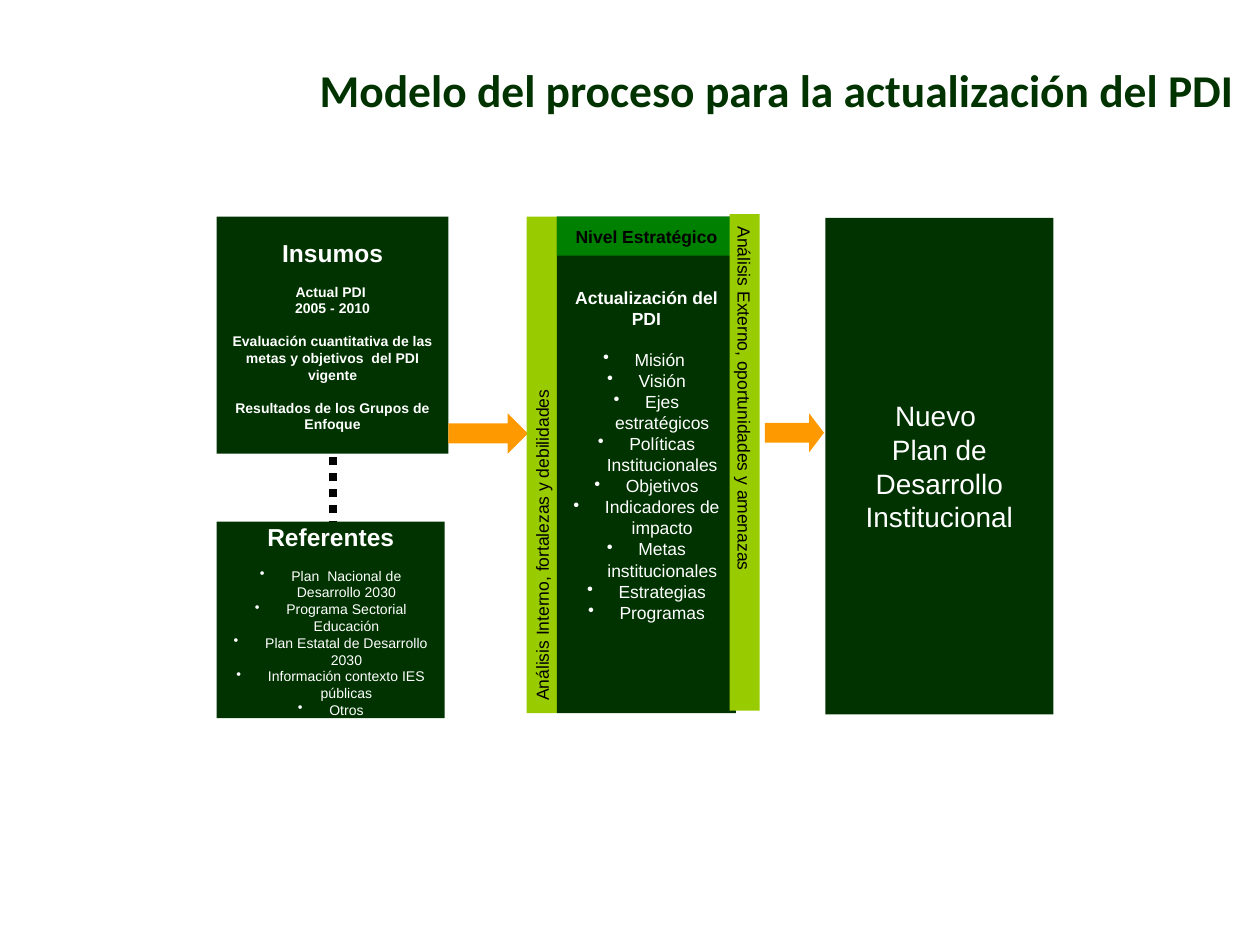
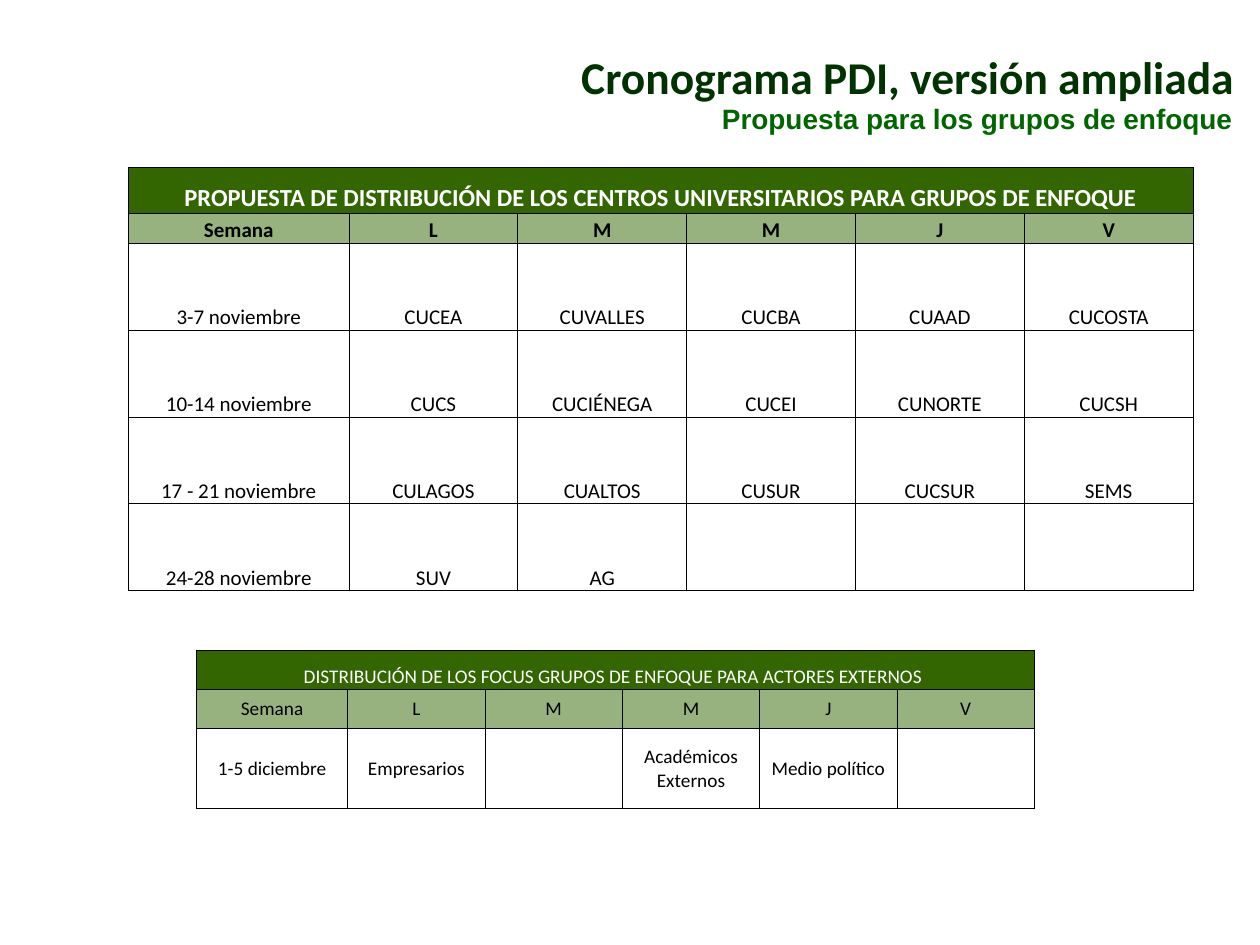
from dataclasses import dataclass

from lxml import etree
from pptx import Presentation
from pptx.dml.color import RGBColor
from pptx.enum.dml import MSO_LINE
from pptx.enum.shapes import MSO_CONNECTOR, MSO_SHAPE
from pptx.enum.text import MSO_ANCHOR, MSO_AUTO_SIZE, PP_ALIGN
from pptx.oxml.ns import qn
from pptx.util import Inches, Pt

RECT, ARROW = MSO_SHAPE.RECTANGLE, MSO_SHAPE.RIGHT_ARROW
STRAIGHT, DOTS = MSO_CONNECTOR.STRAIGHT, MSO_LINE.ROUND_DOT
TOP, MIDDLE, BOTTOM = MSO_ANCHOR.TOP, MSO_ANCHOR.MIDDLE, MSO_ANCHOR.BOTTOM
CENTER, RIGHT = PP_ALIGN.CENTER, PP_ALIGN.RIGHT
GROW = MSO_AUTO_SIZE.SHAPE_TO_FIT_TEXT

COLS, ROWS = 100, 75  # layout grid of every slide


@dataclass(frozen=True)
class Theme:
    dark: str = "003300"
    mid: str = "008000"
    lime: str = "99CC00"
    orange: str = "FF9900"
    subtitle: str = "006600"
    header: str = "336600"
    white: str = "FFFFFF"
    black: str = "000000"
    body_font: str = "Arial"
    title_font: str = "Calibri"
    title_size: int = 26
    big_size: int = 16
    heading_size: int = 14
    week_size: int = 12
    actor_size: int = 11
    text_size: int = 10
    small_size: int = 8


THEME = Theme()


def add_text(tf, text, size=THEME.text_size, color=THEME.white, bold=False,
             font=THEME.body_font, align=CENTER, before=0, bullet=False):
    """Append one paragraph, filling the frame's first one when it is empty."""
    p = tf.paragraphs[0]
    if p.runs:
        p = tf.add_paragraph()
    p.alignment = align
    if before:
        p.space_before = Pt(before)
    if bullet:
        pPr = p._p.get_or_add_pPr()
        pPr.set("marL", str(Inches(0.25)))
        pPr.set("indent", str(-Inches(0.25)))
        etree.SubElement(pPr, qn("a:buChar"), char="•")
    r = p.add_run()
    r.text = text
    r.font.size, r.font.bold, r.font.name = Pt(size), bold, font
    r.font.color.rgb = RGBColor.from_string(color)


class Deck:
    def __init__(self, theme):
        self.theme = theme
        self.prs = Presentation()
        self.prs.slide_width, self.prs.slide_height = Inches(10), Inches(7.5)
        self.s = None

    def x(self, cols):
        return round(self.prs.slide_width * cols / COLS)

    def y(self, rows):
        return round(self.prs.slide_height * rows / ROWS)

    def area(self, left, top, width, height):
        return self.x(left), self.y(top), self.x(width), self.y(height)

    def new_slide(self):
        self.s = self.prs.slides.add_slide(self.prs.slide_layouts[6])

    def shape(self, at, fill, kind=RECT):
        sp = self.s.shapes.add_shape(kind, *self.area(*at))
        sp.shadow.inherit = False
        sp.fill.solid()
        sp.fill.fore_color.rgb = RGBColor.from_string(fill)
        sp.line.fill.background()
        sp.text_frame.vertical_anchor = MIDDLE
        sp.text_frame.word_wrap = True
        return sp

    def panel(self, at):
        return self.shape(at, self.theme.dark).text_frame

    def arrow(self, at, head):
        sp = self.shape(at, self.theme.orange, ARROW)
        sp.adjustments[0], sp.adjustments[1] = 0.5, head

    def side_band(self, at, text, rotation=0):
        """Narrow band whose text runs along its height."""
        sp = self.shape(at, self.theme.lime)
        sp.rotation = rotation
        tf = sp.text_frame
        tf.word_wrap = False
        tf._txBody.bodyPr.set("vert", "eaVert")
        add_text(tf, text, color=self.theme.black)

    def dotted_line(self, x, top, bottom):
        c = self.s.shapes.add_connector(
            STRAIGHT, self.x(x), self.y(top), self.x(x), self.y(bottom))
        c.line.color.rgb = RGBColor.from_string(self.theme.black)
        c.line.width, c.line.dash_style = Pt(4.5), DOTS
        etree.SubElement(c._element.spPr, qn("a:effectLst"))

    def text_box(self, at, text, **fmt):
        tf = self.s.shapes.add_textbox(*self.area(*at)).text_frame
        tf.word_wrap, tf.auto_size = True, GROW
        add_text(tf, text, bold=True, align=RIGHT, **fmt)

    def title(self, text, top):
        t = self.theme
        self.text_box((11.4, top, 87.6, 5.3), text, size=t.title_size,
                      color=t.dark, font=t.title_font)

    def cell(self, cell, text, anchor, fill=None, alpha=None, **fmt):
        cell.margin_left = cell.margin_right = cell.margin_top = Inches(0.01)
        cell.margin_bottom = 0
        cell.vertical_anchor = anchor
        if text:
            add_text(cell.text_frame, text, font=self.theme.title_font, **fmt)
        tcPr = cell._tc.get_or_add_tcPr()
        for side in ("a:lnL", "a:lnR", "a:lnT", "a:lnB"):
            ln = etree.SubElement(tcPr, qn(side), w=str(Pt(0.5)))
            solid = etree.SubElement(ln, qn("a:solidFill"))
            etree.SubElement(solid, qn("a:srgbClr"), val=self.theme.black)
        if not fill:
            cell.fill.background()
            return
        cell.fill.solid()
        cell.fill.fore_color.rgb = RGBColor.from_string(fill)
        if alpha:
            clr = tcPr.find(qn("a:solidFill")).find(qn("a:srgbClr"))
            etree.SubElement(clr, qn("a:alpha"), val=str(alpha * 1000))

    def schedule(self, left, top, col_widths, row_heights, heading, weeks,
                 size, heading_size, bold, anchor):
        """Table with a merged heading, a row of weekdays and a row per week."""
        t = self.theme
        days = ["Semana", "L", "M", "M", "J", "V"]
        rows = [[heading] + [""] * (len(days) - 1), days] + weeks
        at = self.area(left, top, sum(col_widths), sum(row_heights))
        tbl = self.s.shapes.add_table(len(rows), len(days), *at).table
        tbl.first_row = tbl.horz_banding = False
        for col, width in zip(tbl.columns, col_widths):
            col.width = self.x(width)
        for row, height in zip(tbl.rows, row_heights):
            row.height = self.y(height)
        tbl.cell(0, 0).merge(tbl.cell(0, len(days) - 1))
        styles = [dict(anchor=BOTTOM, fill=t.header, size=heading_size, bold=bold),
                  dict(anchor=anchor, fill=t.header, alpha=50, size=size,
                       bold=bold, color=t.black)]
        styles += [dict(anchor=anchor, size=size, color=t.black)] * len(weeks)
        for i, (row, style) in enumerate(zip(rows, styles)):
            for j, text in enumerate(row):
                self.cell(tbl.cell(i, j), text, **style)


def build_model(deck):
    t = deck.theme
    small_gap, text_gap = 9.2, 11.5  # one line of small and of normal text
    top, height, band = 17.2, 39.4, 2.4
    deck.new_slide()
    deck.dotted_line(26.4, 31.3, 45.3)

    tf = deck.panel((17.2, top, 18.4, 18.8))
    add_text(tf, "Insumos", size=t.heading_size, bold=True)
    for text, before in [
            ("Actual PDI ", small_gap),
            ("2005 - 2010", 0),
            ("Evaluación cuantitativa de las metas y objetivos  del PDI vigente", small_gap),
            ("Resultados de los Grupos de Enfoque", small_gap)]:
        add_text(tf, text, size=t.small_size, bold=True, before=before)

    deck.arrow((35.6, 32.8, 6.3, 3.2), 0.5)
    deck.side_band((41.8, top, band, height),
                   "Análisis Interno, fortalezas y debilidades", rotation=180)

    tf = deck.panel((44.2, top, 14.2, height))
    tf.margin_bottom = Inches(0.21)
    add_text(tf, "Actualización del PDI", bold=True)
    for i, text in enumerate([
            "Misión ", "Visión", "Ejes estratégicos", "Políticas Institucionales",
            "Objetivos", "Indicadores de impacto", "Metas institucionales",
            "Estrategias", "Programas"]):
        add_text(tf, text, bullet=True, before=0 if i else text_gap)

    deck.arrow((60.7, 32.8, 4.7, 3.1), 0.38)
    tf = deck.panel((65.5, 17.3, 18.1, height))
    for text in ("Nuevo ", "Plan de Desarrollo Institucional"):
        add_text(tf, text, size=t.big_size)

    tf = deck.shape((44.2, top, 14.2, 3.1), t.mid).text_frame
    tf.word_wrap = False
    add_text(tf, "Nivel Estratégico", color=t.black, bold=True)
    deck.title("Modelo del proceso para la actualización del PDI", 4.4)

    tf = deck.panel((17.2, 41.4, 18.1, 15.6))
    tf.margin_top = tf.margin_bottom = 0
    add_text(tf, "Referentes", size=t.heading_size, bold=True)
    for i, text in enumerate([
            "Plan  Nacional de Desarrollo 2030", "Programa Sectorial Educación",
            "Plan Estatal de Desarrollo 2030", "Información contexto IES públicas",
            "Otros"]):
        add_text(tf, text, size=t.small_size, bullet=True,
                 before=0 if i else small_gap)

    deck.side_band((57.9, 17, band, height),
                   "Análisis Externo, oportunidades y amenazas")


def build_calendar(deck):
    t = deck.theme
    deck.new_slide()
    deck.schedule(
        10.2, 13.3, [17.5] + [13.4] * 5, [3.6, 2.4] + [6.9] * 4,
        "PROPUESTA DE DISTRIBUCIÓN DE LOS CENTROS UNIVERSITARIOS PARA GRUPOS DE ENFOQUE",
        [["3-7 noviembre", "CUCEA", "CUVALLES", "CUCBA", "CUAAD", "CUCOSTA"],
         ["10-14 noviembre", "CUCS", "CUCIÉNEGA", "CUCEI", "CUNORTE", "CUCSH"],
         ["17 - 21 noviembre", "CULAGOS", "CUALTOS", "CUSUR", "CUCSUR", "SEMS"],
         ["24-28 noviembre", "SUV", "AG", "", "", ""]],
        size=t.week_size, heading_size=t.heading_size, bold=True, anchor=BOTTOM)
    deck.title("Cronograma PDI, versión ampliada", 3.4)
    deck.text_box((29.9, 7.6, 68.9, 3.7), "Propuesta para los grupos de enfoque",
                  size=t.big_size, color=t.subtitle)
    deck.schedule(
        15.6, 51.6, [12] + [10.9] * 5, [3.1, 3.1, 6.4],
        "DISTRIBUCIÓN DE LOS FOCUS GRUPOS DE ENFOQUE PARA ACTORES EXTERNOS ",
        [["1-5 diciembre", "Empresarios", "", "Académicos Externos",
          "Medio político", ""]],
        size=t.actor_size, heading_size=t.actor_size, bold=False, anchor=MIDDLE)


def main():
    deck = Deck(THEME)
    build_model(deck)
    build_calendar(deck)
    deck.prs.save("out.pptx")


if __name__ == "__main__":
    main()
